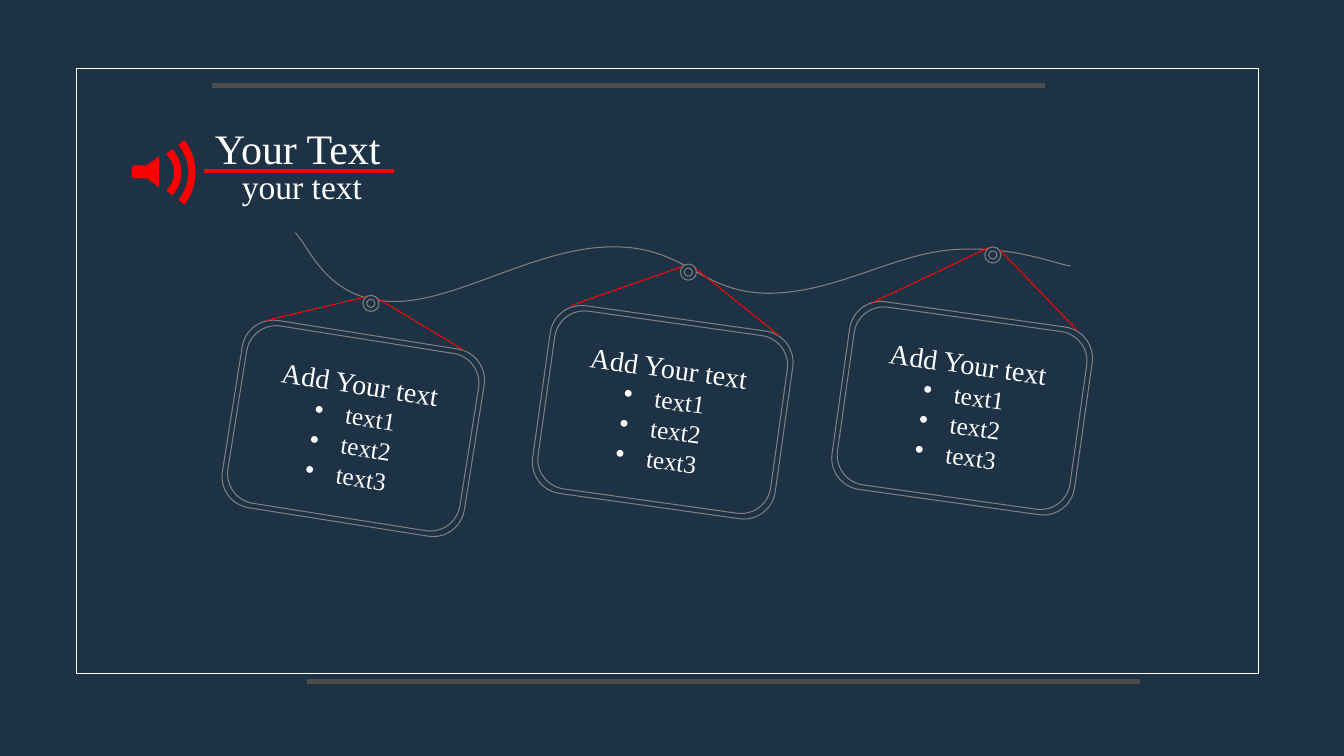
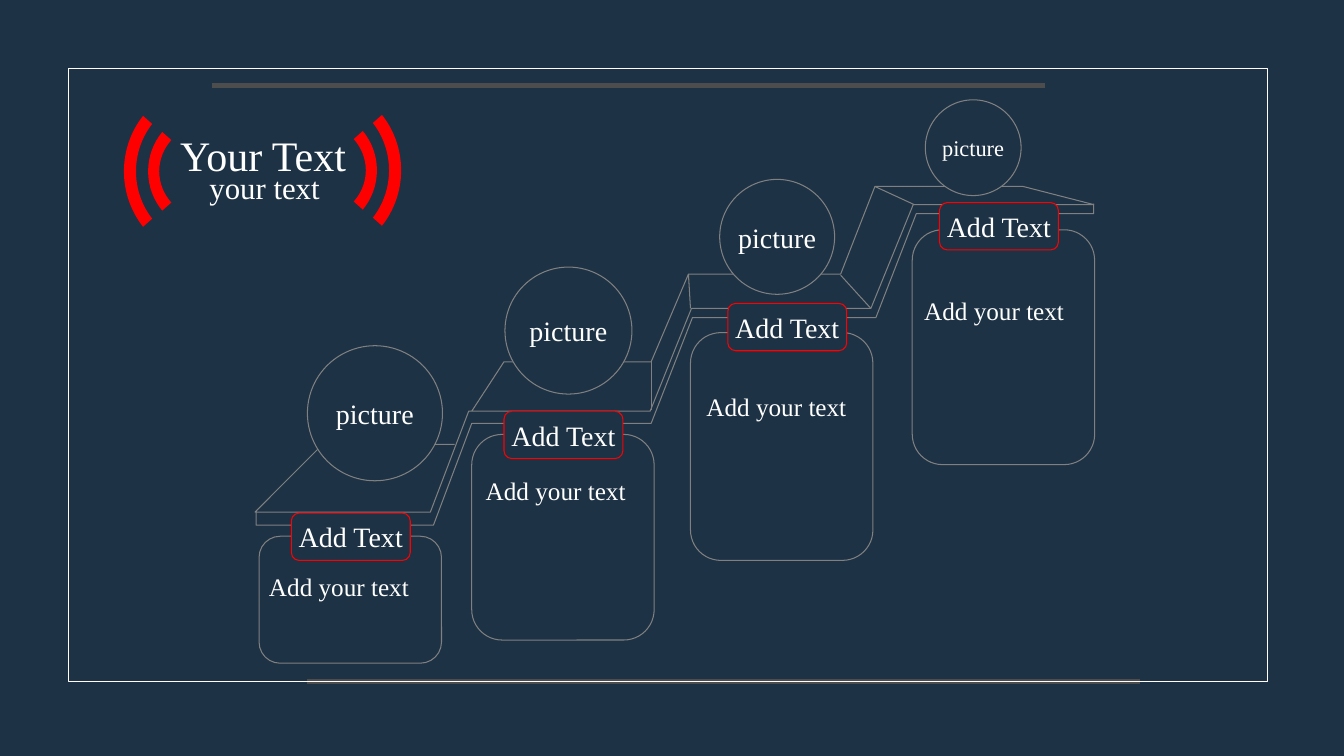
from lxml.etree import SubElement
from pptx import Presentation
from pptx.dml.color import RGBColor
from pptx.enum.shapes import MSO_CONNECTOR, MSO_SHAPE
from pptx.enum.text import MSO_ANCHOR, MSO_AUTO_SIZE, PP_ALIGN
from pptx.oxml.ns import qn
from pptx.util import Inches, Pt

NAVY = RGBColor(0x1D, 0x32, 0x45)
WHITE = RGBColor(0xFF, 0xFF, 0xFF)
RED = RGBColor(0xFF, 0x00, 0x00)
GRAY = RGBColor(0x80, 0x80, 0x80)
DARK = RGBColor(0x4D, 0x4D, 0x4D)
FONT = "Times New Roman"
THIN = 0.75

BARS = [((3.05, 6.76), (11.31, 6.76)), ((2.1, 0.85), (10.37, 0.85))]

LINES = ["Add Your text", "text1", "text2", "text3"]
CARDS = [
    dict(at=(2.29, 3.31), turn=9, ring=(3.68, 3.01),
         cords=[((3.65, 2.94), (2.64, 3.18)), ((4.61, 3.48), (3.73, 2.95))]),
    dict(at=(5.36, 3.15), turn=8, ring=(6.83, 2.7),
         cords=[((6.81, 2.63), (5.67, 3.03)), ((7.73, 3.33), (6.87, 2.64))]),
    dict(at=(8.33, 3.11), turn=8, ring=(9.85, 2.53),
         cords=[((9.8, 2.46), (8.66, 3)), ((9.92, 2.48), (10.68, 3.27))]),
]
ROPE = [
    (2.93, 2.31),
    (3.07, 2.45, 3.24, 2.97, 3.87, 2.99),
    (4.49, 3.02, 5.3, 2.46, 6.05, 2.45),
    (6.8, 2.43, 6.93, 2.9, 7.61, 2.91),
    (8.28, 2.91, 8.82, 2.54, 9.42, 2.48),
    (10.02, 2.43, 10.41, 2.6, 10.62, 2.64),
]
HORN = [(1.58, 1.86), (1.58, 1.55), (1.46, 1.64), (1.33, 1.64),
        (1.32, 1.64, 1.31, 1.65, 1.31, 1.66), (1.31, 1.75),
        (1.31, 1.76, 1.32, 1.77, 1.33, 1.77), (1.46, 1.77)]

SMALL = [((0.49, 0.09, 0.23), (0.42, 0.08, 0.18)),
         ((0.63, 0.11, 0.32), (0.56, 0.1, 0.27))]
LARGE = [((0.23, 0.14, 0.39), (0.12, 0.12, 0.31)),
         ((0.47, 0.19, 0.55), (0.35, 0.16, 0.47))]

STEPS = [
    dict(panel=(2.57, 5.32, 1.81, 1.26), tag=(2.89, 5.09),
         disc=(3.05, 3.43, 1.34), size=20, note=(2.57, 5.62)),
    dict(panel=(4.68, 4.31, 1.81, 2.04), tag=(5, 4.08),
         disc=(5.01, 2.65, 1.26), size=20, note=(4.72, 4.67)),
    dict(panel=(6.85, 3.3, 1.81, 2.26), tag=(7.22, 3.01),
         disc=(7.14, 1.78, 1.14), size=20, note=(6.91, 3.83)),
    dict(panel=(9.05, 2.28, 1.81, 2.33), tag=(9.32, 2.01),
         disc=(9.18, 0.99, 0.95), size=16, note=(9.07, 2.88)),
]
STAIRS = [
    [(4.51, 4.41), (3.2, 4.41), (2.53, 5.08), (4.27, 5.08), (4.65, 4.08),
     (6.45, 4.08), (6.86, 3.06), (8.64, 3.06), (9.06, 2.03), (10.85, 2.03),
     (10.15, 1.85), (8.68, 1.85), (8.34, 2.72), (6.83, 2.72), (6.46, 3.59),
     (5, 3.59), (4.68, 4.08)],
    [(2.54, 5.07), (2.54, 5.21), (4.3, 5.21), (4.68, 4.2), (6.46, 4.2),
     (6.87, 3.15), (8.69, 3.15), (9.09, 2.12), (10.85, 2.12), (10.85, 2.02)],
]
FOLDS = [((8.68, 1.85), (9.07, 2.03)), ((6.83, 2.72), (6.85, 3.06)),
         ((6.46, 3.58), (6.46, 4.07)), ((8.34, 2.73), (8.64, 3.06))]


def emu(*nums):
    return [Inches(n) for n in nums]


def paint(shape, fill=None, line=None):
    shape.shadow.inherit = False
    if fill is None:
        shape.fill.background()
    else:
        shape.fill.solid()
        shape.fill.fore_color.rgb = fill
    if line is None:
        shape.line.fill.background()
    else:
        shape.line.color.rgb = line
        shape.line.width = Pt(THIN)
    return shape


def form(slide, kind, box, fill=None, line=GRAY):
    return paint(slide.shapes.add_shape(kind, *emu(*box)), fill, line)


def curve(shape, parts):
    legs = iter(list(shape._element.iter(qn("a:lnTo"))))
    for part in parts:
        leg = next(legs)
        if len(part) == 6:
            bend = leg.makeelement(qn("a:cubicBezTo"), {})
            leg.addprevious(bend)
            for item in (leg, next(legs), next(legs)):
                bend.append(item[0])
                item.getparent().remove(item)


def draw(slide, loops, fill=None, line=None):
    pen = slide.shapes.build_freeform(*emu(*loops[0][0]), scale=1.0)
    for n, (first, *parts) in enumerate(loops):
        if n:
            pen.move_to(*emu(*first))
        spots = [emu(*part[i:i + 2]) for part in parts for i in range(0, len(part), 2)]
        pen.add_line_segments(spots, close=fill is not None)
    shape = pen.convert_to_shape()
    curve(shape, [part for loop in loops for part in loop[1:]])
    return paint(shape, fill, line)


def link(slide, ends, color=GRAY, width=THIN):
    start, stop = ends
    wire = slide.shapes.add_connector(MSO_CONNECTOR.STRAIGHT, *emu(*start, *stop))
    wire.line.color.rgb = color
    wire.line.width = Pt(width)
    SubElement(wire._element.spPr, qn("a:effectLst"))


def style(para, size, align):
    para.font.name = FONT
    para.font.size = Pt(size)
    para.font.color.rgb = WHITE
    para.alignment = align


def write(shape, lines, sizes, align=PP_ALIGN.CENTER, wrap=False, anchor=MSO_ANCHOR.MIDDLE):
    frame = shape.text_frame
    frame.word_wrap = wrap
    frame.vertical_anchor = anchor
    frame.text = "\n".join(lines)
    for para, size in zip(frame.paragraphs, sizes):
        style(para, size, align)
    return frame


def label(slide, box, text, size, align=PP_ALIGN.LEFT, wrap=True):
    area = slide.shapes.add_textbox(*emu(*box))
    frame = write(area, [text], [size], align, wrap, MSO_ANCHOR.TOP)
    frame.auto_size = MSO_AUTO_SIZE.SHAPE_TO_FIT_TEXT


def dot(para):
    props = para._p.get_or_add_pPr()
    props.set("marL", str(Inches(0.31)))
    props.set("indent", str(-Inches(0.31)))
    face = props.makeelement(qn("a:buFont"), {"typeface": "Arial"})
    mark = props.makeelement(qn("a:buChar"), {"char": "•"})
    props.insert(0, face)
    props.insert(1, mark)


def waves(base, mid, pairs, side=1):
    def arc(size, way):
        edge, depth, half = size

        def spot(back, rise):
            return base + side * (edge - back * depth), mid + way * rise * half

        return [spot(1, 1),
                spot(0.38, 0.73) + spot(0, 0.38) + spot(0, 0),
                spot(0, -0.38) + spot(0.38, -0.73) + spot(1, -1)]

    return [arc(outer, 1) + arc(inner, -1) for outer, inner in pairs]


def start(deck, frame):
    slide = deck.slides.add_slide(deck.slide_layouts[6])
    slide.background.fill.solid()
    slide.background.fill.fore_color.rgb = NAVY
    for bar in BARS:
        link(slide, bar, DARK, 4)
    form(slide, MSO_SHAPE.FLOWCHART_PROCESS, frame, line=WHITE)
    return slide


def head(slide, title, under, size):
    label(slide, title, "Your Text", 30, PP_ALIGN.CENTER)
    label(slide, under, "your text", size, wrap=False)


def hang(slide):
    link(slide, ((2.02, 1.7), (3.91, 1.7)), RED, 3)
    head(slide, (1.97, 1.17, 1.97, 0.6), (2.3, 1.6, 1.41, 0.51), 24)
    draw(slide, [HORN] + waves(1.31, 1.71, SMALL), RED)
    draw(slide, [ROPE], line=GRAY)
    for card in CARDS:
        x, y = card["at"]
        for gap in (0, 0.05):
            box = (x + gap, y + gap, 2.43 - 2 * gap, 1.88 - 2 * gap)
            plate = form(slide, MSO_SHAPE.ROUNDED_RECTANGLE, box)
            plate.rotation = card["turn"]
        frame = write(plate, LINES, [20, 18, 18, 18])
        for para in frame.paragraphs[1:]:
            dot(para)
        for cord in card["cords"]:
            link(slide, cord, RED)
        x, y = card["ring"]
        form(slide, MSO_SHAPE.DONUT, (x - 0.08, y - 0.08, 0.16, 0.16), NAVY)


def climb(slide):
    draw(slide, waves(1.7, 1.7, LARGE, -1), RED)
    draw(slide, waves(3.51, 1.69, LARGE), RED)
    head(slide, (1.27, 1.24, 2.68, 0.61), (1.98, 1.62, 1.31, 0.47), 22)
    for stair in STAIRS:
        draw(slide, [stair], line=GRAY)
    for fold in FOLDS:
        link(slide, fold)
    block = MSO_SHAPE.FLOWCHART_ALTERNATE_PROCESS
    for step in STEPS:
        form(slide, block, step["panel"])
        tag = form(slide, block, (*step["tag"], 1.18, 0.47), NAVY, RED)
        write(tag, ["Add Text"], [20])
        x, y, wide = step["disc"]
        disc = form(slide, MSO_SHAPE.OVAL, (x, y, wide, wide), NAVY)
        write(disc, ["picture"], [step["size"]])
        label(slide, (*step["note"], 1.82, 0.4), "Add your text", 18)


def main():
    deck = Presentation()
    deck.slide_width, deck.slide_height = emu(40 / 3, 7.5)
    hang(start(deck, (0.76, 0.68, 11.73, 6)))
    climb(start(deck, (0.68, 0.68, 11.89, 6.08)))
    deck.save("out.pptx")


if __name__ == "__main__":
    main()
